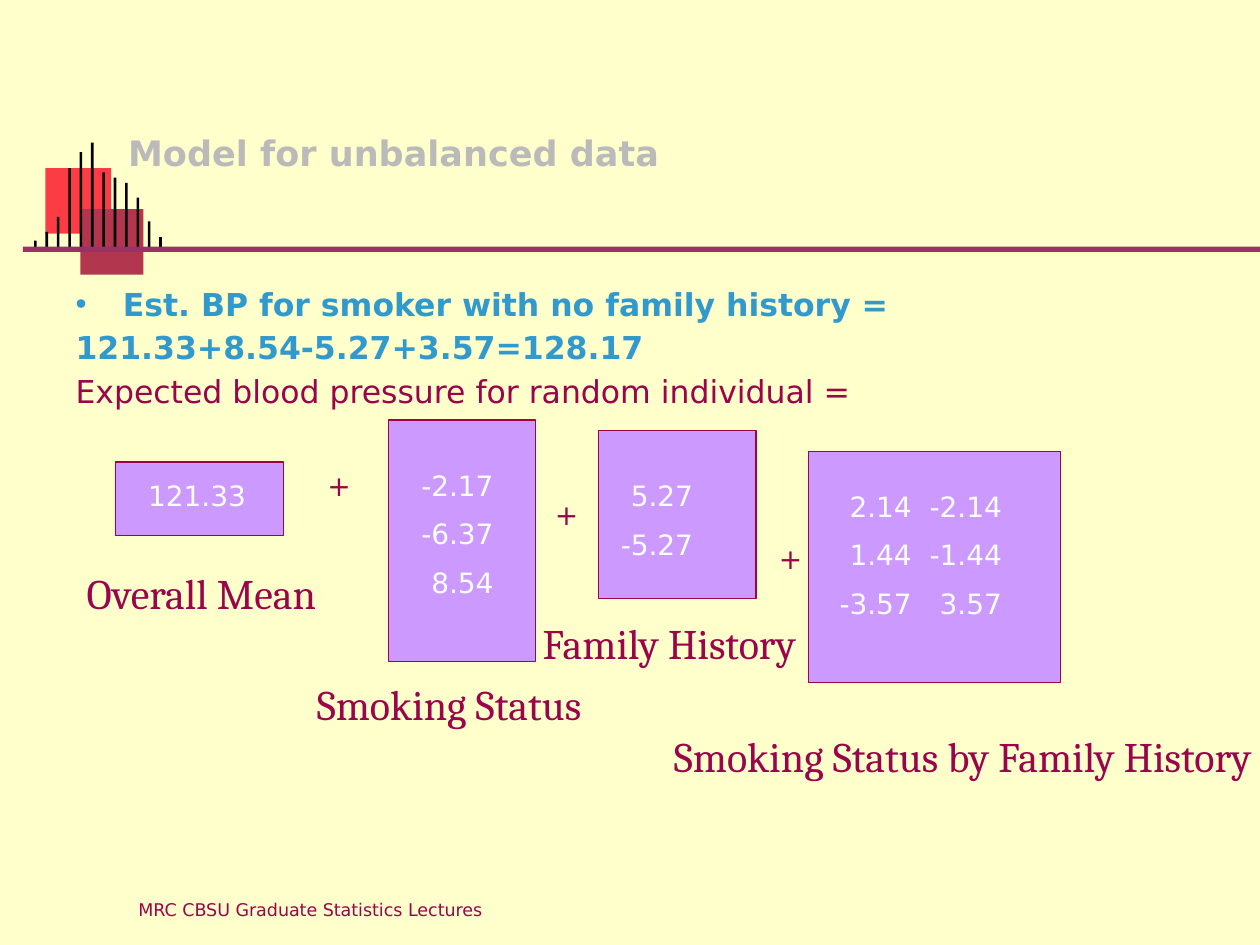
from dataclasses import dataclass

from lxml.etree import SubElement
from pptx import Presentation
from pptx.dml.color import RGBColor
from pptx.enum.shapes import MSO_SHAPE
from pptx.enum.text import MSO_ANCHOR, MSO_AUTO_SIZE, PP_ALIGN
from pptx.oxml.ns import qn
from pptx.slide import Slide
from pptx.text.text import TextFrame
from pptx.util import Pt


@dataclass(frozen=True)
class Theme:
    background: str = "FFFFCC"
    wine: str = "9A044B"
    rule: str = "993366"
    lavender: str = "CC99FF"
    blue: str = "3299CC"
    grey: str = "BABABA"
    white: str = "FFFFFF"
    black: str = "000000"
    red: str = "FC3C45"
    crimson: str = "B2364E"
    sans: str = "DejaVu Sans"
    serif: str = "Cambria"
    title_size: float = 20
    body_size: float = 18
    value_size: float = 16
    label_size: float = 24
    footer_size: float = 10


@dataclass(frozen=True)
class Area:
    left: float
    top: float
    width: float
    height: float

    def lengths(self) -> tuple[Pt, ...]:
        return Pt(self.left), Pt(self.top), Pt(self.width), Pt(self.height)


@dataclass(frozen=True)
class Column:
    area: Area
    values: tuple[str, ...]


@dataclass(frozen=True)
class Term:
    panel: Area
    columns: tuple[Column, ...]
    label_area: Area
    label: str


THEME = Theme()

TERMS = (
    Term(Area(66, 264, 96, 42),
         (Column(Area(72, 270, 68.5, 27), ("121.33",)),),
         Area(42.5, 321, 147, 36), "Overall Mean"),
    Term(Area(222, 240, 84, 138),
         (Column(Area(228, 264, 54, 84), ("-2.17", "-6.37", "8.54")),),
         Area(174, 384, 166, 36), "Smoking Status"),
    Term(Area(342, 246, 90, 96),
         (Column(Area(342, 270, 54, 55), ("5.27", "-5.27")),),
         Area(303, 349.5, 162, 36), "Family History"),
    Term(Area(462, 258, 144, 132),
         (Column(Area(470, 276, 51, 84), ("2.14", "1.44", "-3.57")),
          Column(Area(521.5, 276, 51, 84), ("-2.14", "-1.44", "3.57"))),
         Area(378, 414, 342, 36), "Smoking Status by Family History"),
)

PLUS_AREAS = (Area(180, 264, 30, 27), Area(310, 281, 30, 27), Area(438, 306, 18, 27))

BAR_HEIGHTS = (6.5, 11.5, 20, 48, 57, 62.5, 45.5, 42.5, 39.5, 31, 17.5, 8.5)
BAR_LEFT, BAR_PITCH, BAR_BASE = 19.5, 6.5, 144


def write(frame: TextFrame, text: str, *, size: float, color: str, font: str = THEME.sans,
          bold: bool = False, align: PP_ALIGN = PP_ALIGN.LEFT, space_before: float = 0,
          line_spacing: float = 1.0, hanging: float = 0, bullet: str = "") -> None:
    first = not frame.text
    paragraph = frame.paragraphs[0] if first else frame.add_paragraph()
    properties = paragraph._p.get_or_add_pPr()
    properties.set("marL", str(Pt(hanging)))
    properties.set("indent", str(-Pt(hanging)))
    if bullet:
        SubElement(properties, qn("a:buChar"), char=bullet)
    else:
        SubElement(properties, qn("a:buNone"))
    paragraph.alignment = align
    paragraph.line_spacing = line_spacing
    paragraph.space_before = Pt(0 if first else space_before)
    run = paragraph.add_run()
    run.text = text
    run.font.name = font
    run.font.size = Pt(size)
    run.font.bold = bold
    run.font.color.rgb = RGBColor.from_string(color)


def add_text_area(slide: Slide, area: Area) -> TextFrame:
    frame = slide.shapes.add_textbox(*area.lengths()).text_frame
    frame.word_wrap = True
    frame.margin_right = 0
    return frame


def add_block(slide: Slide, area: Area, fill: str, outline: str = "") -> None:
    block = slide.shapes.add_shape(MSO_SHAPE.RECTANGLE, *area.lengths())
    block.shadow.inherit = False
    block.fill.solid()
    block.fill.fore_color.rgb = RGBColor.from_string(fill)
    if outline:
        block.line.color.rgb = RGBColor.from_string(outline)
        block.line.width = Pt(0.75)
    else:
        block.line.fill.background()


def place(placeholder, area: Area, anchor: MSO_ANCHOR) -> TextFrame:
    placeholder.left, placeholder.top, placeholder.width, placeholder.height = area.lengths()
    frame = placeholder.text_frame
    frame.auto_size = MSO_AUTO_SIZE.NONE
    frame.vertical_anchor = anchor
    return frame


def add_ornament(slide: Slide) -> None:
    add_block(slide, Area(26, 96, 37.5, 37.5), THEME.red)
    add_block(slide, Area(46, 119.5, 36, 37.5), THEME.crimson)
    for index, height in enumerate(BAR_HEIGHTS):
        bar = Area(BAR_LEFT + index * BAR_PITCH, BAR_BASE - height, 1.5, height)
        add_block(slide, bar, THEME.black)
    add_block(slide, Area(13, 141, 707, 3), THEME.rule)


def add_term(slide: Slide, term: Term) -> None:
    add_block(slide, term.panel, THEME.lavender, THEME.wine)
    for column in term.columns:
        values = add_text_area(slide, column.area)
        for value in column.values:
            write(values, value, size=THEME.value_size, color=THEME.white,
                  align=PP_ALIGN.RIGHT, space_before=8.5)
    label = add_text_area(slide, term.label_area)
    write(label, term.label, size=THEME.label_size, color=THEME.wine, font=THEME.serif)


def main() -> None:
    deck = Presentation()
    deck.slide_width, deck.slide_height = Pt(720), Pt(540)
    slide = deck.slides.add_slide(deck.slide_layouts[1])
    slide.background.fill.solid()
    slide.background.fill.fore_color.rgb = RGBColor.from_string(THEME.background)

    add_ornament(slide)
    title = place(slide.shapes.title, Area(66, 66, 408, 45), MSO_ANCHOR.MIDDLE)
    write(title, "Model for unbalanced data", size=THEME.title_size, color=THEME.grey,
          bold=True, line_spacing=0.9)

    body = place(slide.placeholders[1], Area(36, 159, 648, 339), MSO_ANCHOR.TOP)
    for text, color, bold, bullet in (
        ("Est. BP for smoker with no family history =", THEME.blue, True, "•"),
        ("121.33+8.54-5.27+3.57=128.17", THEME.blue, True, ""),
        ("Expected blood pressure for random individual =", THEME.wine, False, ""),
    ):
        write(body, text, size=THEME.body_size, color=color, bold=bold, bullet=bullet,
              hanging=27, space_before=3.4)

    for term in TERMS:
        add_term(slide, term)
    for area in PLUS_AREAS:
        write(add_text_area(slide, area), "+", size=THEME.value_size, color=THEME.wine)
    footer = add_text_area(slide, Area(72, 510, 402, 18))
    write(footer, "MRC CBSU Graduate Statistics Lectures", size=THEME.footer_size,
          color=THEME.wine)
    deck.save("out.pptx")


if __name__ == "__main__":
    main()
